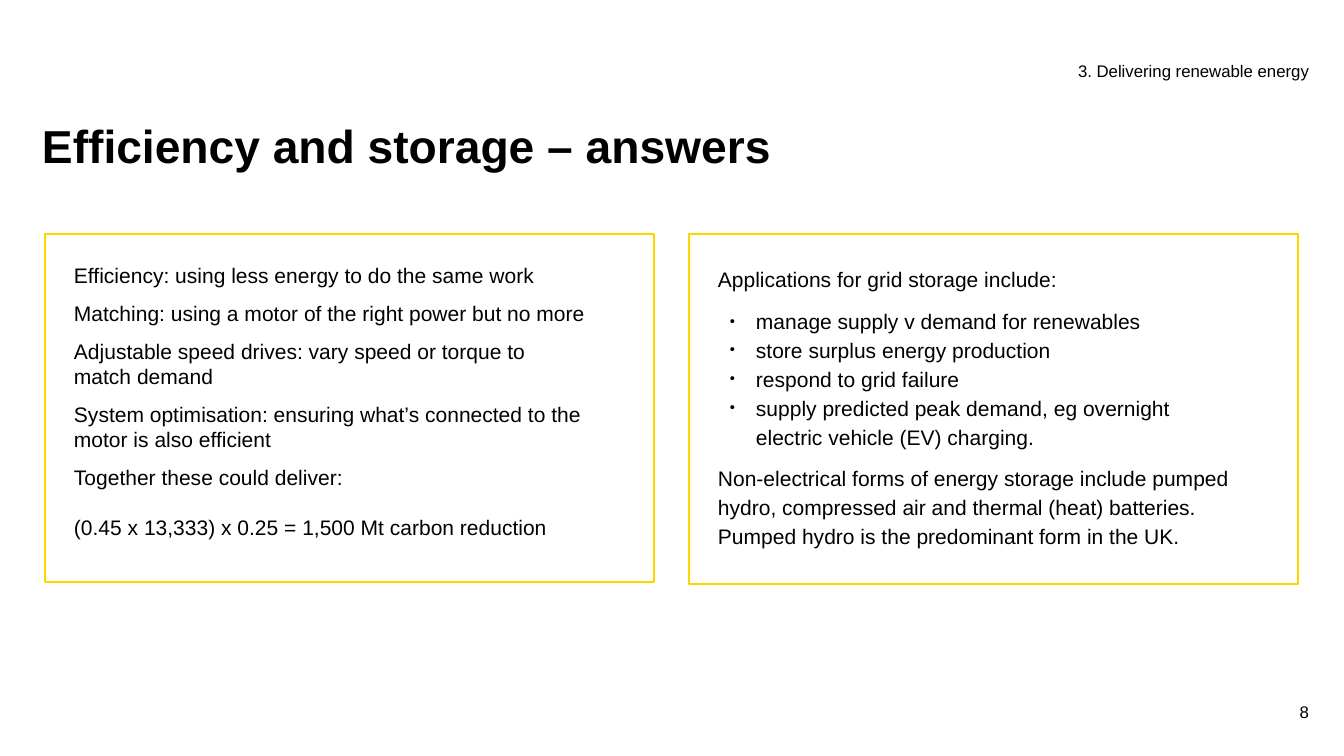
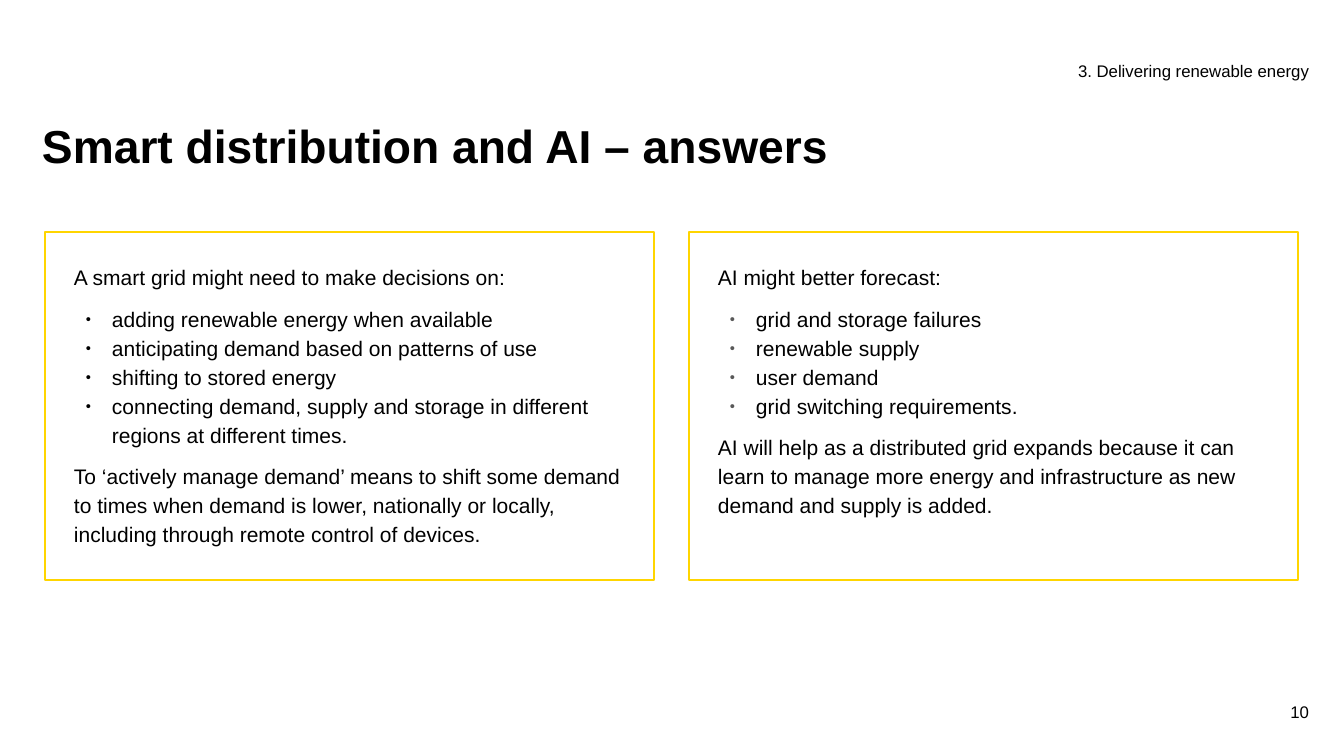
from dataclasses import dataclass

from lxml import etree
from pptx import Presentation
from pptx import util as u
from pptx.dml.color import RGBColor
from pptx.enum import shapes, text
from pptx.oxml import ns

PX = 12096


@dataclass(frozen=True)
class Theme:
    font: str = "Arial"
    ink: str = "000000"
    muted: str = "595959"
    frame: str = "FFD500"
    frame_width: float = 2.25
    title_size: int = 44
    body_size: int = 20
    small_size: int = 16
    panel_spacing: float = 1.15
    gap: int = 12


THEME = Theme()
SECTION = "3. Delivering renewable energy"
PANEL_LEFTS = (45, 689)
PANEL_WIDTH = 609
PANEL_INSET = 29
BULLET_INDENT = 38
BULLET_HANG = 26


def px(length):
    return u.Emu(length * PX)


def add_bullet(paragraph, color):
    properties = paragraph._p.get_or_add_pPr()
    properties.set("marL", str(px(BULLET_INDENT)))
    properties.set("indent", str(-px(BULLET_HANG)))
    bullet_color = etree.SubElement(properties, ns.qn("a:buClr"))
    etree.SubElement(bullet_color, ns.qn("a:srgbClr"), val=color)
    etree.SubElement(properties, ns.qn("a:buSzPct"), val="70000")
    etree.SubElement(properties, ns.qn("a:buFont"), typeface=THEME.font)
    etree.SubElement(properties, ns.qn("a:buChar"), char="•")


def write(paragraph, content, size=THEME.body_size, bold=False, bullet=None,
          align=text.PP_ALIGN.LEFT, spacing=1.0, before=0, after=0):
    paragraph.text = content
    paragraph.alignment = align
    paragraph.line_spacing = spacing
    paragraph.space_before = u.Pt(before)
    paragraph.space_after = u.Pt(after)
    if bullet:
        add_bullet(paragraph, bullet)
    for run in paragraph.runs:
        run.font.name = THEME.font
        run.font.size = u.Pt(size)
        run.font.bold = bold
        run.font.color.rgb = RGBColor.from_string(THEME.ink)


def set_frame(frame, inset_x, inset_y, anchor=text.MSO_ANCHOR.TOP):
    frame.word_wrap = True
    frame.vertical_anchor = anchor
    frame.margin_left = frame.margin_right = px(inset_x)
    frame.margin_top = frame.margin_bottom = px(inset_y)


def add_label(slide, content, box, inset=(8, 4),
              anchor=text.MSO_ANCHOR.TOP, **style):
    label = slide.shapes.add_textbox(*map(px, box))
    set_frame(label.text_frame, *inset, anchor)
    write(label.text_frame.paragraphs[0], content, **style)


def add_panel(slide, left, top, height, paragraphs):
    panel = slide.shapes.add_shape(
        shapes.MSO_SHAPE.RECTANGLE, *map(px, (left, top, PANEL_WIDTH, height)))
    panel.shadow.inherit = False
    panel.fill.background()
    panel.line.color.rgb = RGBColor.from_string(THEME.frame)
    panel.line.width = u.Pt(THEME.frame_width)
    frame = panel.text_frame
    set_frame(frame, PANEL_INSET, PANEL_INSET)
    for index, (content, style) in enumerate(paragraphs):
        paragraph = frame.add_paragraph() if index else frame.paragraphs[0]
        write(paragraph, content, **style)


def statements(lines, conclusion):
    spaced = [(line, {"after": THEME.gap}) for line in lines]
    return spaced + [(conclusion, {"before": THEME.gap, "after": THEME.gap})]


def bullet_answer(intro, points, closing, bullet=THEME.ink):
    spacing = {"spacing": THEME.panel_spacing}
    bullets = [(point, {**spacing, "bullet": bullet,
                        "before": 0 if index else THEME.gap})
               for index, point in enumerate(points)]
    ending = {**spacing, "before": THEME.gap, "after": THEME.gap}
    return [(intro, spacing), *bullets, (closing, ending)]


def add_answer_slide(deck, title, number, top, heights, answers):
    slide = deck.slides.add_slide(deck.slide_layouts[6])
    add_label(slide, title, (34, 119, 1262, 60), size=THEME.title_size,
              bold=True, spacing=0.9, anchor=text.MSO_ANCHOR.MIDDLE)
    add_label(slide, number, (1264, 702, 45, 40), inset=(0, 0),
              size=THEME.small_size, align=text.PP_ALIGN.RIGHT)
    add_label(slide, SECTION, (1070, 57, 247, 45), size=THEME.small_size)
    for left, height, answer in zip(PANEL_LEFTS, heights, answers):
        add_panel(slide, left, top, height, answer)


def main():
    deck = Presentation()
    deck.slide_width, deck.slide_height = px(1344), px(756)

    efficiency = statements(
        ["Efficiency: using less energy to do the same work",
         "Matching: using a motor of the right power but no more",
         "Adjustable speed drives: vary speed or torque to \vmatch demand",
         "System optimisation: ensuring what’s connected to the motor is also efficient",
         "Together these could deliver:"],
        "(0.45 x 13,333) x 0.25 = 1,500 Mt carbon reduction")
    storage = bullet_answer(
        "Applications for grid storage include:",
        ["manage supply v demand for renewables",
         "store surplus energy production",
         "respond to grid failure",
         "supply predicted peak demand, eg overnight \velectric vehicle (EV) charging."],
        "Non-electrical forms of energy storage include pumped hydro, compressed air "
        "and thermal (heat) batteries. Pumped hydro is the predominant form in the UK.")
    add_answer_slide(deck, "Efficiency and storage – answers", "8", 234,
                     (348, 350), (efficiency, storage))

    smart_grid = bullet_answer(
        "A smart grid might need to make decisions on:",
        ["adding renewable energy when available",
         "anticipating demand based on patterns of use",
         "shifting to stored energy",
         "connecting demand, supply and storage in different regions at different times."],
        "To ‘actively manage demand’ means to shift some demand to times when demand "
        "is lower, nationally or locally, including through remote control of devices.")
    forecasting = bullet_answer(
        "AI might better forecast:",
        ["grid and storage failures",
         "renewable supply",
         "user demand",
         "grid switching requirements."],
        "AI will help as a distributed grid expands because it can learn to manage "
        "more energy and infrastructure as new demand and supply is added.",
        bullet=THEME.muted)
    add_answer_slide(deck, "Smart distribution and AI – answers", "10", 232,
                     (348, 348), (smart_grid, forecasting))

    deck.save("out.pptx")


if __name__ == "__main__":
    main()
